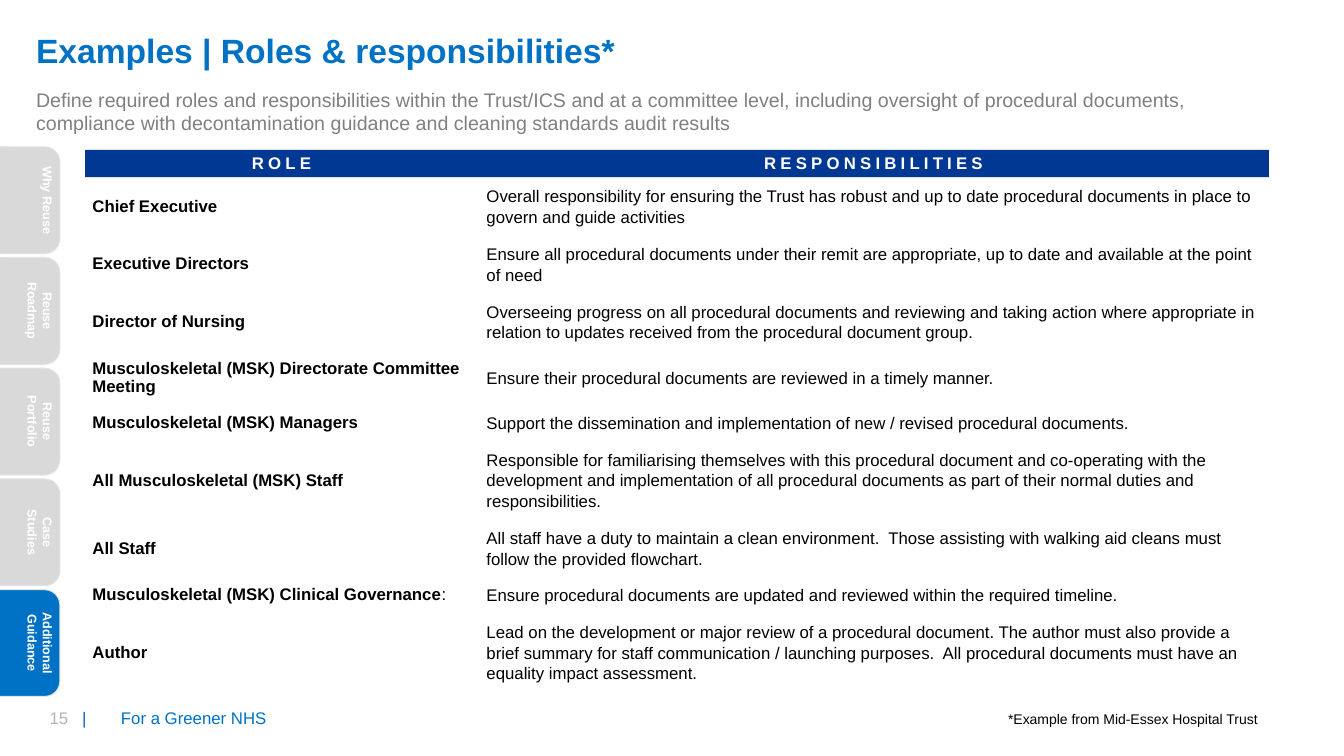
"""Build the roles and responsibilities slide."""
from lxml import etree
from pptx import Presentation
from pptx.dml.color import RGBColor
from pptx.enum.shapes import MSO_SHAPE
from pptx.enum.text import MSO_ANCHOR, PP_ALIGN
from pptx.oxml.ns import qn
from pptx.util import Cm, Pt

ROUNDED = MSO_SHAPE.ROUNDED_RECTANGLE
TOP, MIDDLE = MSO_ANCHOR.TOP, MSO_ANCHOR.MIDDLE
LEFT, CENTER, RIGHT = PP_ALIGN.LEFT, PP_ALIGN.CENTER, PP_ALIGN.RIGHT
TITLE_ONLY = 5
PLAIN_TABLE_STYLE = "{2D5ABB26-0587-4C30-8999-92F81FD0307C}"

FONT = "Arial"
BLUE, NAVY, RULE_BLUE = "0072C6", "003893", "005EB8"
GREY, PALE, BORDER, NUMBER_GREY = "808080", "D9D9D9", "E2E2E2", "ADB6BE"
BLACK, WHITE = "000000", "FFFFFF"

TABS = ["Why Reuse", "Reuse Roadmap", "Reuse Portfolio", "Case Studies",
        "Additional Guidance"]
ACTIVE_TAB = "Additional Guidance"
TAB_TOP, TAB_PITCH = 3.7, 2.79

HEADERS = ["ROLE", "RESPONSIBILITIES"]
HEADER_HEIGHT = 0.7
COLUMN_WIDTHS = [9.93, 19.91]
ROLES = [
    (1.45, "Chief Executive", "",
     "Overall responsibility for ensuring the Trust has robust and up to date "
     "procedural documents in place to govern and guide activities"),
    (1.45, "Executive Directors", "",
     "Ensure all procedural documents under their remit are appropriate, "
     "up to date and available at the point of need"),
    (1.45, "Director of Nursing", "",
     "Overseeing progress on all procedural documents and reviewing and taking "
     "action where appropriate in relation to updates received from the "
     "procedural document group."),
    (1.37, "Musculoskeletal (MSK) Directorate Committee Meeting", "",
     "Ensure their procedural documents are reviewed in a timely manner."),
    (0.91, "Musculoskeletal (MSK) Managers", "",
     "Support the dissemination and implementation of new / revised "
     "procedural documents."),
    (1.98, "All Musculoskeletal (MSK) Staff", "",
     "Responsible for familiarising themselves with this procedural document "
     "and co-operating with the development and implementation of all "
     "procedural documents as part of their normal duties and responsibilities."),
    (1.45, "All Staff", "",
     "All staff have a duty to maintain a clean environment.  Those assisting "
     "with walking aid cleans must follow the provided flowchart."),
    (0.91, "Musculoskeletal (MSK) Clinical Governance", ":",
     "Ensure procedural documents are updated and reviewed within the "
     "required timeline."),
    (1.98, "Author", "",
     "Lead on the development or major review of a procedural document. The "
     "author must also provide a brief summary for staff communication / "
     "launching purposes.  All procedural documents must have an equality "
     "impact assessment."),
]


def color(value):
    """Turn a hex string into a colour."""
    return RGBColor.from_string(value)


def add_run(paragraph, text, size, value, bold=False):
    """Add one formatted run to a paragraph."""
    run = paragraph.add_run()
    run.text = text
    run.font.name = FONT
    run.font.size = Pt(size)
    run.font.bold = bold
    run.font.color.rgb = color(value)
    return run


def set_frame(frame, horizontal, vertical, anchor):
    """Set wrapping, margins and anchor of a text frame."""
    frame.word_wrap = True
    frame.margin_left = frame.margin_right = Cm(horizontal)
    frame.margin_top = frame.margin_bottom = Cm(vertical)
    frame.vertical_anchor = anchor


def add_text(slide, box, text, size, value, margin=0.25, anchor=TOP, align=LEFT):
    """Add a text box holding one run."""
    shape = slide.shapes.add_textbox(*[Cm(length) for length in box])
    set_frame(shape.text_frame, margin, 0.13, anchor)
    paragraph = shape.text_frame.paragraphs[0]
    paragraph.alignment = align
    add_run(paragraph, text, size, value)


def format_title(slide, text):
    """Place and fill the title placeholder."""
    title = slide.shapes.title
    title.left, title.top, title.width, title.height = (
        Cm(0.91), Cm(0.62), Cm(27.69), Cm(2.31))
    set_frame(title.text_frame, 0, 0.13, TOP)
    paragraph = title.text_frame.paragraphs[0]
    paragraph.alignment = LEFT
    add_run(paragraph, text, 24, BLUE, True)


def add_tab(slide, index, label):
    """Add one navigation tab at the left edge."""
    shape = slide.shapes.add_shape(
        ROUNDED, Cm(-0.5), Cm(TAB_TOP + index * TAB_PITCH), Cm(2.01), Cm(2.69))
    shape.shadow.inherit = False
    shape.adjustments[0] = 0.19
    shape.fill.solid()
    shape.fill.fore_color.rgb = color(BLUE if label == ACTIVE_TAB else PALE)
    shape.line.color.rgb = color(BORDER)
    shape.line.width = Pt(0.75)
    set_frame(shape.text_frame, 0, 0.25, TOP)
    shape.text_frame._txBody.bodyPr.set("vert", "vert")
    paragraph = shape.text_frame.paragraphs[0]
    paragraph.alignment = CENTER
    add_run(paragraph, label, 9, WHITE, True)


def add_border(cell, side):
    """Draw a thin border on one side of a cell."""
    line = etree.SubElement(cell._tc.get_or_add_tcPr(), qn(f"a:{side}"), w="12700")
    fill = etree.SubElement(line, qn("a:solidFill"))
    etree.SubElement(fill, qn("a:srgbClr"), val=BORDER)


def fill_header(cell, label):
    """Format one cell of the header row."""
    for side in ("lnT", "lnB"):
        add_border(cell, side)
    cell.fill.solid()
    cell.fill.fore_color.rgb = color(NAVY)
    cell.vertical_anchor = MIDDLE
    cell.margin_top = cell.margin_bottom = Cm(0.1)
    paragraph = cell.text_frame.paragraphs[0]
    paragraph.alignment = CENTER
    run = add_run(paragraph, label, 12, WHITE, True)
    run._r.get_or_add_rPr().set("spc", "300")


def fill_body(cell, bold_text, plain_text, spacing):
    """Format one body cell with bold and plain text."""
    cell.fill.background()
    cell.vertical_anchor = MIDDLE
    cell.margin_left = cell.margin_right = Cm(0.2)
    cell.margin_top = cell.margin_bottom = Cm(0.15)
    paragraph = cell.text_frame.paragraphs[0]
    paragraph.line_spacing = spacing
    for text, bold in ((bold_text, True), (plain_text, False)):
        if text:
            add_run(paragraph, text, 12, BLACK, bold)


def add_roles_table(slide):
    """Add the table of roles and responsibilities."""
    heights = [HEADER_HEIGHT] + [role[0] for role in ROLES]
    table = slide.shapes.add_table(
        len(heights), len(HEADERS), Cm(2.13), Cm(3.77),
        Cm(sum(COLUMN_WIDTHS)), Cm(sum(heights))).table
    table.first_row = table.horz_banding = False
    table._tbl.tblPr.find(qn("a:tableStyleId")).text = PLAIN_TABLE_STYLE
    for column, width in zip(table.columns, COLUMN_WIDTHS):
        column.width = Cm(width)
    for row, height in zip(table.rows, heights):
        row.height = Cm(height)
    for index, label in enumerate(HEADERS):
        fill_header(table.cell(0, index), label)
    for index, (_, role, suffix, duty) in enumerate(ROLES, 1):
        fill_body(table.cell(index, 0), role, suffix, 1.0)
        fill_body(table.cell(index, 1), "", duty, 1.1)


def main():
    """Build and save the presentation."""
    presentation = Presentation()
    presentation.slide_width, presentation.slide_height = Cm(33.87), Cm(19.05)
    slide = presentation.slides.add_slide(presentation.slide_layouts[TITLE_ONLY])
    format_title(slide, "Examples | Roles & responsibilities*")
    add_text(slide, (0.91, 2.08, 31.01, 0.86),
             "Define required roles and responsibilities within the Trust/ICS and at "
             "a committee level, including oversight of procedural documents, "
             "compliance with decontamination guidance and cleaning standards audit "
             "results", 14, GREY, margin=0)
    add_roles_table(slide)
    for index, label in enumerate(TABS):
        add_tab(slide, index, label)
    add_text(slide, (1, 17.7, 1.2, 0.76), "15", 12, NUMBER_GREY)
    add_text(slide, (1.82, 17.7, 0.8, 0.76), "|", 12, RULE_BLUE)
    add_text(slide, (2.8, 17.58, 19.56, 1.02), "For a Greener NHS", 12, BLUE,
             anchor=MIDDLE)
    add_text(slide, (17.54, 17.77, 14.4, 0.64),
             "*Example from Mid-Essex Hospital Trust", 10, BLACK, align=RIGHT)
    presentation.save("out.pptx")


if __name__ == "__main__":
    main()
